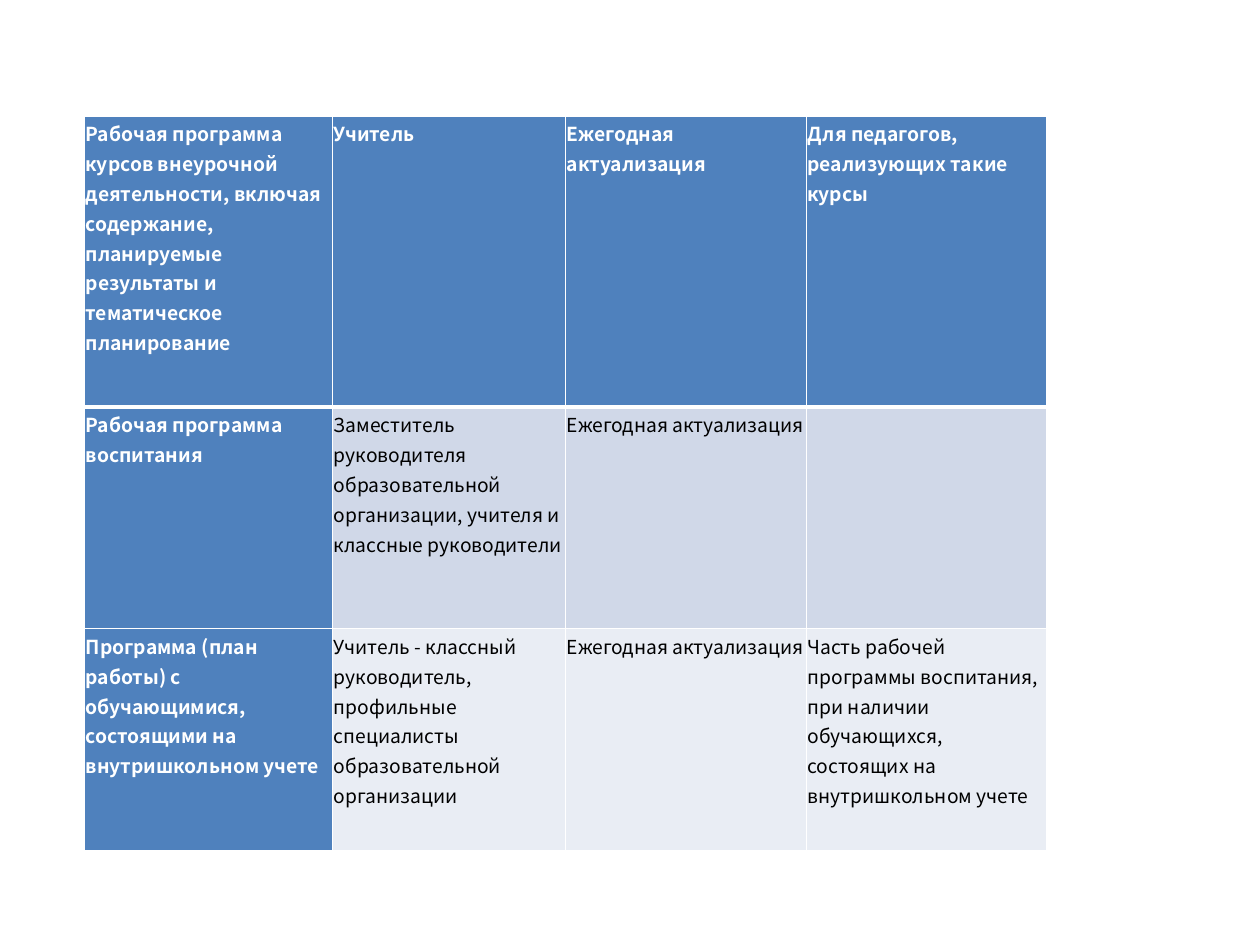
from lxml import etree
from pptx import Presentation
from pptx import util as u
from pptx.dml.color import RGBColor
from pptx.oxml.ns import qn

COLORS = {"head": "4F81BD", "band": "D0D8E8", "plain": "E9EDF4",
          "light": "FFFFFF", "dark": "000000"}
FONT = "Noto Sans CJK KR"
COLUMNS = [1.97, 1.85, 1.91, 1.91]
ROWS = [2.31, 1.76, 1.76]
PROGRAMS = [
    ["Рабочая программа курсов внеурочной деятельности, включая содержание, "
     "планируемые результаты и тематическое планирование",
     "Учитель", "Ежегодная актуализация", "Для педагогов, реализующих такие курсы"],
    ["Рабочая программа воспитания",
     "Заместитель руководителя образовательной организации, учителя и классные руководители",
     "Ежегодная актуализация", ""],
    ["Программа (план работы) с обучающимися, состоящими на внутришкольном учете",
     "Учитель - классный руководитель, профильные специалисты образовательной организации",
     "Ежегодная актуализация",
     "Часть рабочей программы воспитания, при наличии обучающихся, состоящих на "
     "внутришкольном учете"],
]


def set_borders(cell, widths):
    """Draw light borders of the given widths: left, right, top, bottom."""
    properties = cell._tc.get_or_add_tcPr()
    for index, (side, width) in enumerate(zip("LRTB", widths)):
        line = etree.Element(qn(f"a:ln{side}"), w=str(u.Pt(width)))
        fill = etree.SubElement(line, qn("a:solidFill"))
        etree.SubElement(fill, qn("a:srgbClr"), val=COLORS["light"])
        properties.insert(index, line)


def write_cell(cell, words, fill, is_heading):
    """Fill one cell and set its text."""
    cell.fill.solid()
    cell.fill.fore_color.rgb = RGBColor.from_string(COLORS[fill])
    cell.margin_left = cell.margin_right = u.Inches(0.01)
    cell.margin_top = cell.margin_bottom = u.Inches(0.01)
    if not words:
        return
    para = cell.text_frame.paragraphs[0]
    para.line_spacing = 1.07
    para.space_after = u.Pt(8)
    span = para.add_run()
    span.text = words
    span.font.name = FONT
    span.font.size = u.Pt(11)
    span.font.bold = is_heading
    span.font.color.rgb = RGBColor.from_string(COLORS["light" if is_heading else "dark"])


def add_program_table(page, left, top):
    """Place the table of programs with its top left corner at the given point."""
    frame = page.shapes.add_table(len(ROWS), len(COLUMNS), left, top,
                                  u.Inches(sum(COLUMNS)), u.Inches(sum(ROWS)))
    table = frame.table
    for column, width in zip(table.columns, COLUMNS):
        column.width = u.Inches(width)
    for row, height in zip(table.rows, ROWS):
        row.height = u.Inches(height)
    table.first_col = True
    for i, program in enumerate(PROGRAMS):
        for j, words in enumerate(program):
            is_heading = i == 0 or j == 0
            fill = "head" if is_heading else ("band" if i % 2 else "plain")
            cell = table.cell(i, j)
            write_cell(cell, words, fill, is_heading)
            set_borders(cell, (1, 1, 3 if i == 1 else 1, 3 if i == 0 else 1))


def main():
    """Build the deck with its single page."""
    deck = Presentation()
    deck.slide_width, deck.slide_height = u.Inches(10), u.Inches(7.5)
    page = deck.slides.add_slide(deck.slide_layouts[6])
    add_program_table(page, u.Inches(0.67), u.Inches(0.92))
    deck.save("out.pptx")


if __name__ == "__main__":
    main()
